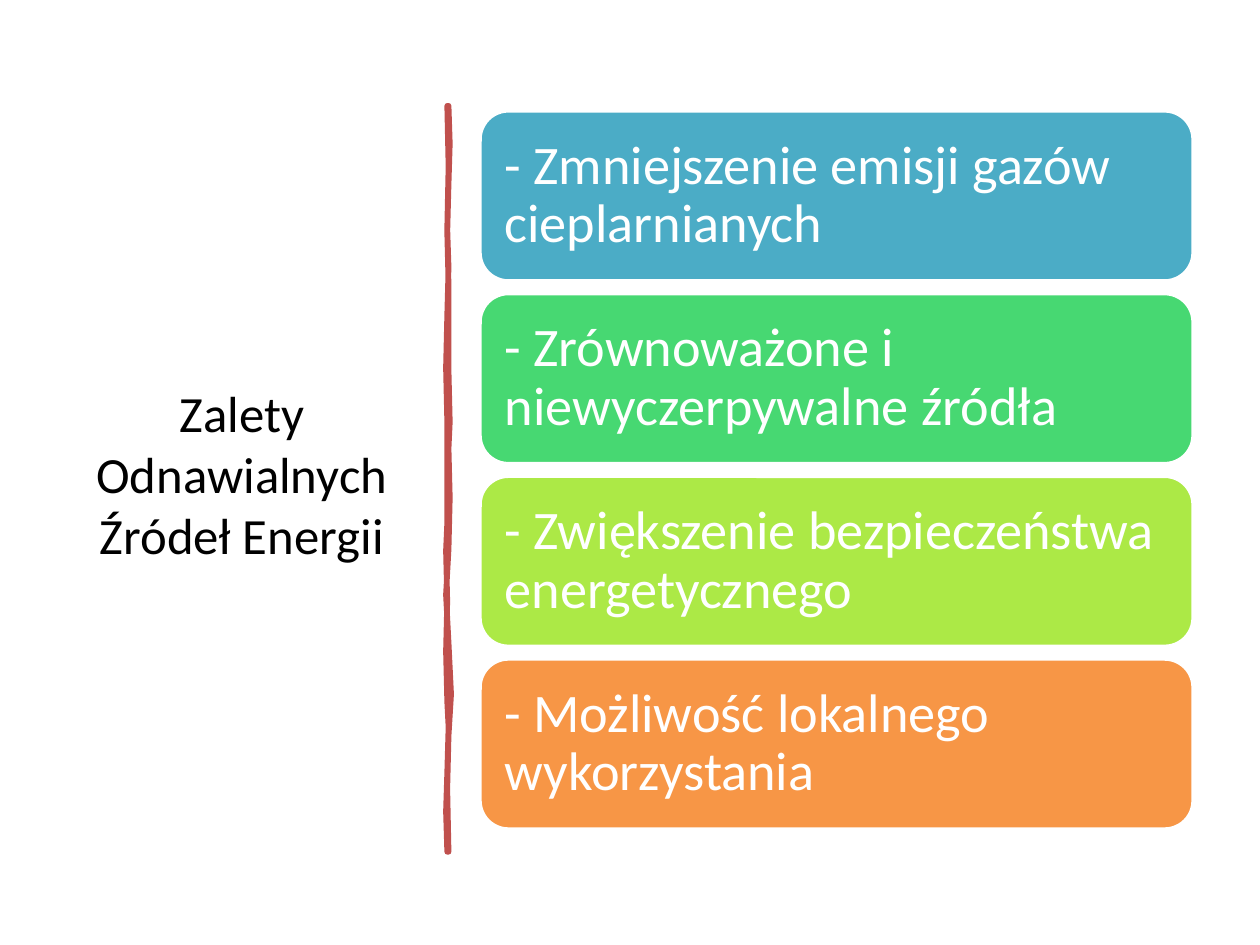
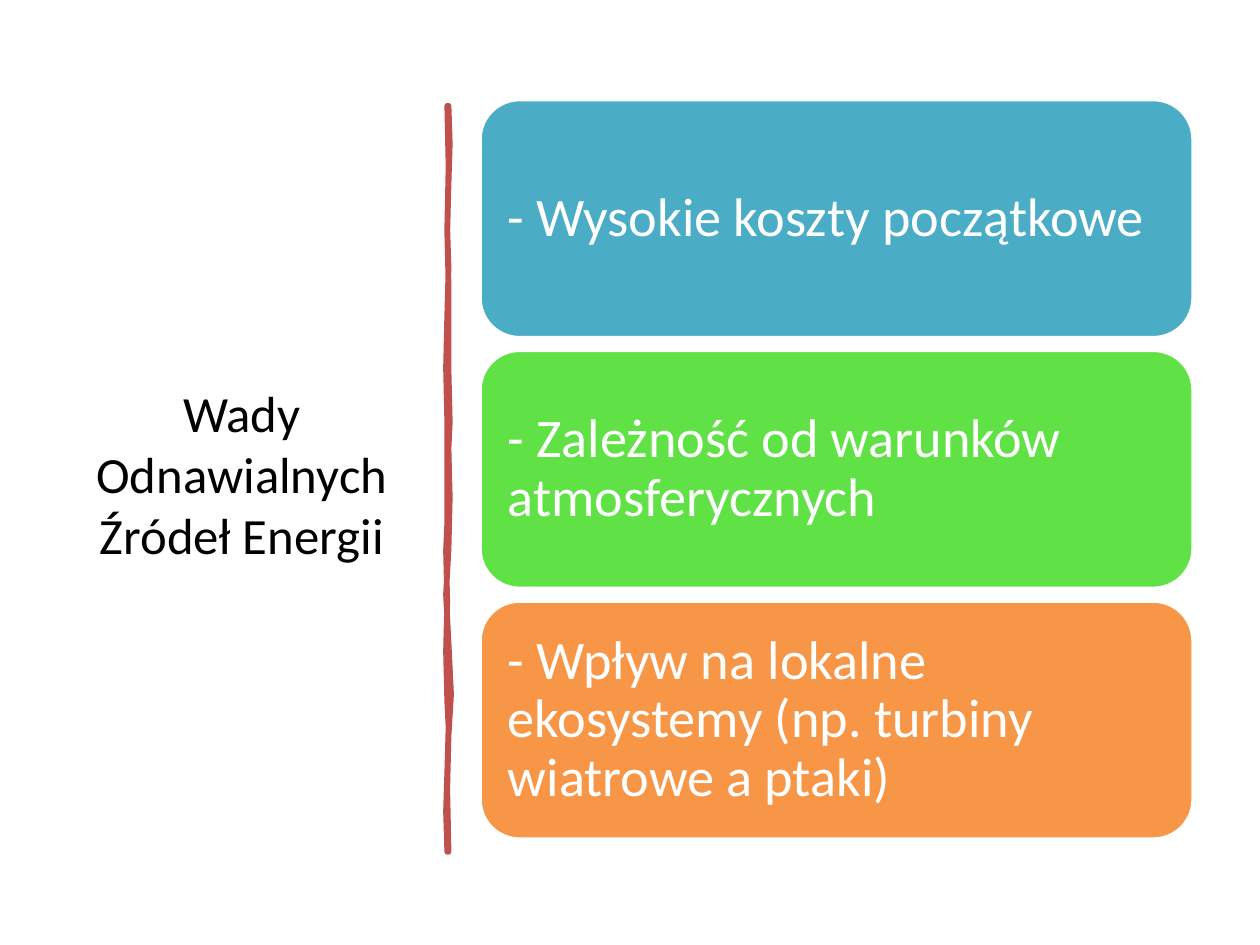
from dataclasses import dataclass

from pptx import Presentation
from pptx.dml.color import RGBColor
from pptx.enum.shapes import MSO_SHAPE as Preset
from pptx.enum.text import MSO_ANCHOR as Anchor, MSO_AUTO_SIZE as AutoSize, PP_ALIGN as Align
from pptx.util import Emu, Pt

EMU_PER_PX = 9144  # 100 px to the inch
TITLE_ONLY = 5


@dataclass(frozen=True)
class Theme:
    font: str = "Calibri"
    title_size: int = 29
    card_size: int = 31
    text: str = "000000"
    white: str = "FFFFFF"
    brush: str = "C0504D"
    blue: str = "4BACC6"
    mint: str = "47D872"
    green: str = "60E146"
    lime: str = "ACE946"
    orange: str = "F79646"
    brush_width: float = 3.25
    card_line_width: int = 2


@dataclass(frozen=True)
class Card:
    text: str
    color: str


@dataclass(frozen=True)
class CardSlide:
    title: str
    top: int
    card_height: int
    cards: tuple[Card, ...]


THEME = Theme()

# Shared geometry in px
TITLE_BOX = (52, 70, 280, 611)
CARD_LEFT, CARD_WIDTH, CARD_GAP, CARD_INSET = 381, 566, 10, 13

# Hand-drawn divider: down its right edge, then back up its left edge
BRUSH_OUTLINE = (
    (356, 84), (357, 114), (356, 146), (355, 185), (356, 226), (356, 294),
    (357, 335), (356, 356), (357, 395), (356, 436), (354, 472), (356, 510),
    (358, 551), (356, 584), (355, 626), (356, 676),
    (355, 676), (354, 644), (355, 613), (356, 577), (355, 557), (354, 517),
    (355, 477), (354, 437), (355, 415), (355, 375), (355, 335), (354, 292),
    (355, 250), (356, 212), (355, 181), (356, 132), (355, 84),
)

SLIDES = (
    CardSlide("Zalety Odnawialnych Źródeł Energii", 88, 135, (
        Card("- Zmniejszenie emisji gazów cieplarnianych", THEME.blue),
        Card("- Zrównoważone i niewyczerpywalne źródła", THEME.mint),
        Card("- Zwiększenie bezpieczeństwa energetycznego", THEME.lime),
        Card("- Możliwość lokalnego wykorzystania", THEME.orange),
    )),
    CardSlide("Wady Odnawialnych Źródeł Energii", 79, 189, (
        Card("- Wysokie koszty początkowe", THEME.blue),
        Card("- Zależność od warunków atmosferycznych", THEME.green),
        Card("- Wpływ na lokalne ekosystemy (np. turbiny wiatrowe a ptaki)", THEME.orange),
    )),
)


def px(value: int) -> Emu:
    return Emu(value * EMU_PER_PX)


def paint(shape, fill: str, line: str, line_width: float) -> None:
    shape.shadow.inherit = False
    shape.fill.solid()
    shape.fill.fore_color.rgb = RGBColor.from_string(fill)
    shape.line.color.rgb = RGBColor.from_string(line)
    shape.line.width = Pt(line_width)


def write(shape, text: str, size: int, color: str, align: Align):
    """Fill the shape with one middle-anchored paragraph and return it."""
    frame = shape.text_frame
    frame.text = text
    frame.word_wrap = True
    frame.auto_size = AutoSize.NONE
    frame.vertical_anchor = Anchor.MIDDLE
    paragraph = frame.paragraphs[0]
    paragraph.alignment = align
    paragraph.font.name = THEME.font
    paragraph.font.size = Pt(size)
    paragraph.font.color.rgb = RGBColor.from_string(color)
    return paragraph


def add_title(slide, text: str) -> None:
    title = slide.shapes.title
    title.left, title.top, title.width, title.height = map(px, TITLE_BOX)
    write(title, text, THEME.title_size, THEME.text, Align.CENTER)


def add_divider(slide) -> None:
    start, *rest = BRUSH_OUTLINE
    builder = slide.shapes.build_freeform(*start, scale=EMU_PER_PX)
    builder.add_line_segments(rest, close=True)
    paint(builder.convert_to_shape(), THEME.brush, THEME.brush, THEME.brush_width)


def add_card(slide, card: Card, top: int, height: int) -> None:
    shape = slide.shapes.add_shape(
        Preset.ROUNDED_RECTANGLE, px(CARD_LEFT), px(top), px(CARD_WIDTH), px(height))
    paint(shape, card.color, THEME.white, THEME.card_line_width)
    paragraph = write(shape, card.text, THEME.card_size, THEME.white, Align.LEFT)
    paragraph.line_spacing = 0.9
    frame = shape.text_frame
    frame.margin_left = frame.margin_right = px(CARD_INSET)
    frame.margin_top = frame.margin_bottom = px(CARD_INSET)


def add_card_slide(presentation, content: CardSlide) -> None:
    slide = presentation.slides.add_slide(presentation.slide_layouts[TITLE_ONLY])
    add_title(slide, content.title)
    add_divider(slide)
    # Equal cards stacked with a constant gap
    for index, card in enumerate(content.cards):
        top = content.top + index * (content.card_height + CARD_GAP)
        add_card(slide, card, top, content.card_height)


def main() -> None:
    presentation = Presentation()
    presentation.slide_width, presentation.slide_height = px(1000), px(750)
    for content in SLIDES:
        add_card_slide(presentation, content)
    presentation.save("out.pptx")


if __name__ == "__main__":
    main()
